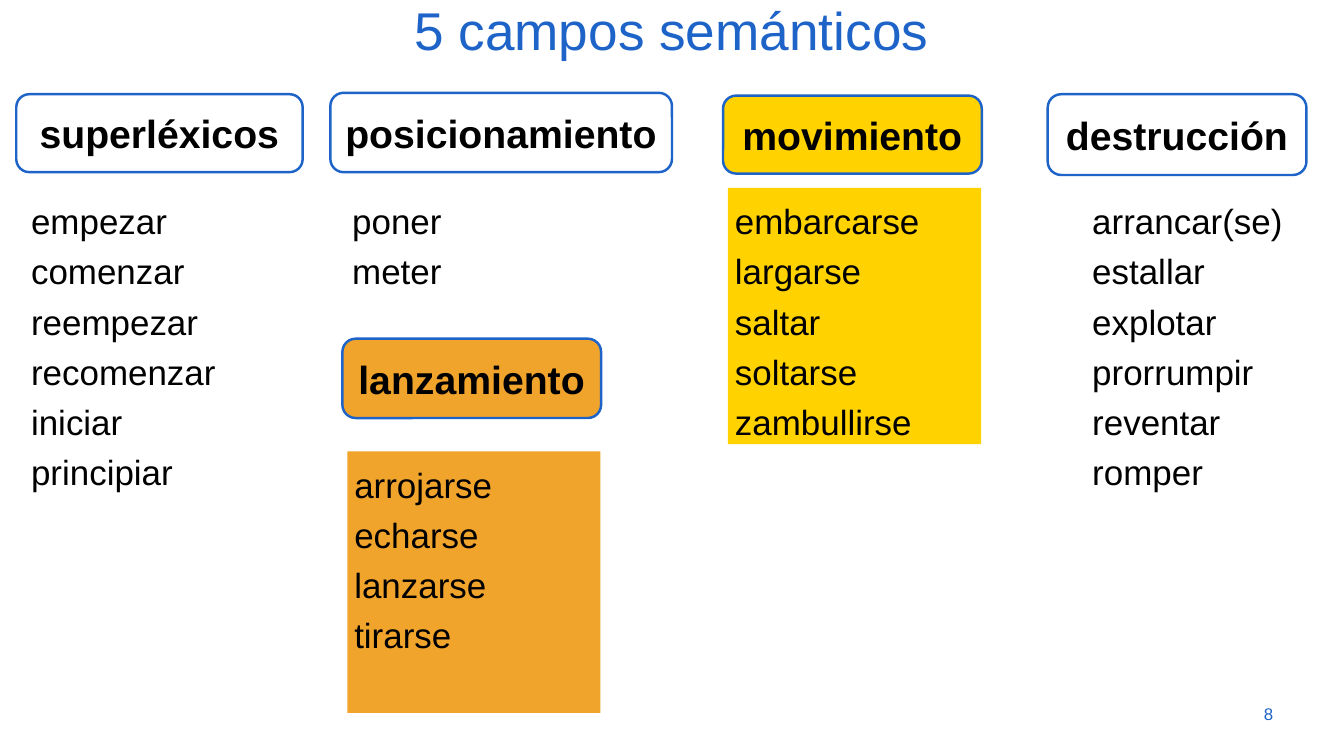
from dataclasses import dataclass
from typing import NamedTuple, Optional

from pptx import Presentation
from pptx.dml.color import RGBColor
from pptx.enum.shapes import MSO_SHAPE
from pptx.enum.text import MSO_ANCHOR, PP_ALIGN
from pptx.util import Emu, Pt

ROUNDED = MSO_SHAPE.ROUNDED_RECTANGLE
RECTANGLE = MSO_SHAPE.RECTANGLE
TOP, MIDDLE = MSO_ANCHOR.TOP, MSO_ANCHOR.MIDDLE
LEFT, CENTER, RIGHT = PP_ALIGN.LEFT, PP_ALIGN.CENTER, PP_ALIGN.RIGHT
EMU_PER_PX = 9144
WORDS_TOP = 265
WORDS_WIDTH = 357


@dataclass(frozen=True)
class Theme:
    """Colours, font and type sizes of the slide."""
    blue: str = "1E64C8"
    black: str = "000000"
    yellow: str = "FFD200"
    orange: str = "F1A42B"
    font: str = "Arial"
    title: float = 54
    heading: float = 39.8
    words: float = 35.5
    page: float = 17.1
    outline: float = 2.5


THEME = Theme()


class Box(NamedTuple):
    """A rectangle in px."""
    left: int
    top: int
    width: int
    height: int


class SemanticField(NamedTuple):
    """A heading with its verbs, their boxes and their shared fill."""
    name: str
    verbs: str
    heading_box: Box
    verbs_box: Box
    fill: Optional[str] = None


FIELDS = [
    SemanticField("superléxicos", "empezar comenzar reempezar recomenzar iniciar principiar",
                  Box(23, 133, 404, 110), Box(34, WORDS_TOP, WORDS_WIDTH, 441)),
    SemanticField("posicionamiento", "poner meter",
                  Box(466, 131, 482, 112), Box(487, WORDS_TOP, WORDS_WIDTH, 154)),
    SemanticField("lanzamiento", "arrojarse echarse lanzarse tirarse",
                  Box(483, 478, 365, 112), Box(490, 637, WORDS_WIDTH, 369), THEME.orange),
    SemanticField("movimiento", "embarcarse largarse saltar soltarse zambullirse",
                  Box(1020, 135, 365, 110), Box(1027, WORDS_TOP, WORDS_WIDTH, 362), THEME.yellow),
    SemanticField("destrucción", "arrancar(se) estallar explotar prorrumpir reventar romper",
                  Box(1478, 133, 365, 114), Box(1531, WORDS_TOP, 331, 513)),
]


def px(length):
    """Turn px into EMU."""
    return Emu(length * EMU_PER_PX)


def write(shape, lines, size, color, align, anchor, spacing=1.0, bold=False):
    """Write each line as a paragraph in the shape."""
    frame = shape.text_frame
    frame.word_wrap = True
    frame.vertical_anchor = anchor
    frame.margin_left = frame.margin_right = px(10)
    frame.margin_top = frame.margin_bottom = px(5)
    for index, line in enumerate(lines):
        paragraph = frame.add_paragraph() if index else frame.paragraphs[0]
        paragraph.alignment = align
        paragraph.line_spacing = spacing
        run = paragraph.add_run()
        run.text = line
        run.font.name = THEME.font
        run.font.size = Pt(size)
        run.font.bold = bold
        run.font.color.rgb = RGBColor.from_string(color)


def add_panel(slide, preset, box, fill, outline=None):
    """Add a preset shape with an optional fill and outline."""
    panel = slide.shapes.add_shape(preset, *map(px, box))
    panel.shadow.inherit = False
    if fill:
        panel.fill.solid()
        panel.fill.fore_color.rgb = RGBColor.from_string(fill)
    else:
        panel.fill.background()
    if outline:
        panel.line.color.rgb = RGBColor.from_string(outline)
        panel.line.width = Pt(THEME.outline)
    else:
        panel.line.fill.background()
    return panel


def add_title(slide, box):
    """Place the slide title."""
    title = slide.shapes.add_textbox(*map(px, box))
    write(title, ["5 campos semánticos"], THEME.title, THEME.blue, CENTER, TOP, 0.9)


def add_page_number(slide, box):
    """Place the page number."""
    number = slide.shapes.add_textbox(*map(px, box))
    write(number, ["8"], THEME.page, THEME.blue, RIGHT, MIDDLE)


def add_heading(slide, box, field):
    """Place the outlined name of a semantic field."""
    heading = add_panel(slide, ROUNDED, box, field.fill, THEME.blue)
    write(heading, [field.name], THEME.heading, THEME.black, CENTER, MIDDLE, bold=True)


def add_verbs(slide, box, field):
    """Place the verbs of a semantic field, on a panel if it has a fill."""
    if field.fill:
        verbs = add_panel(slide, RECTANGLE, box, field.fill)
    else:
        verbs = slide.shapes.add_textbox(*map(px, box))
    write(verbs, field.verbs.split(), THEME.words, THEME.black, LEFT, TOP, 1.2)


def main():
    """Build and save the slide."""
    deck = Presentation()
    deck.slide_width, deck.slide_height = px(1896), px(1067)
    slide = deck.slides.add_slide(deck.slide_layouts[6])
    add_title(slide, Box(88, 1, 1718, 94))
    add_page_number(slide, Box(1705, 979, 101, 57))
    for field in FIELDS:
        add_heading(slide, field.heading_box, field)
        add_verbs(slide, field.verbs_box, field)
    deck.save("out.pptx")


if __name__ == "__main__":
    main()
